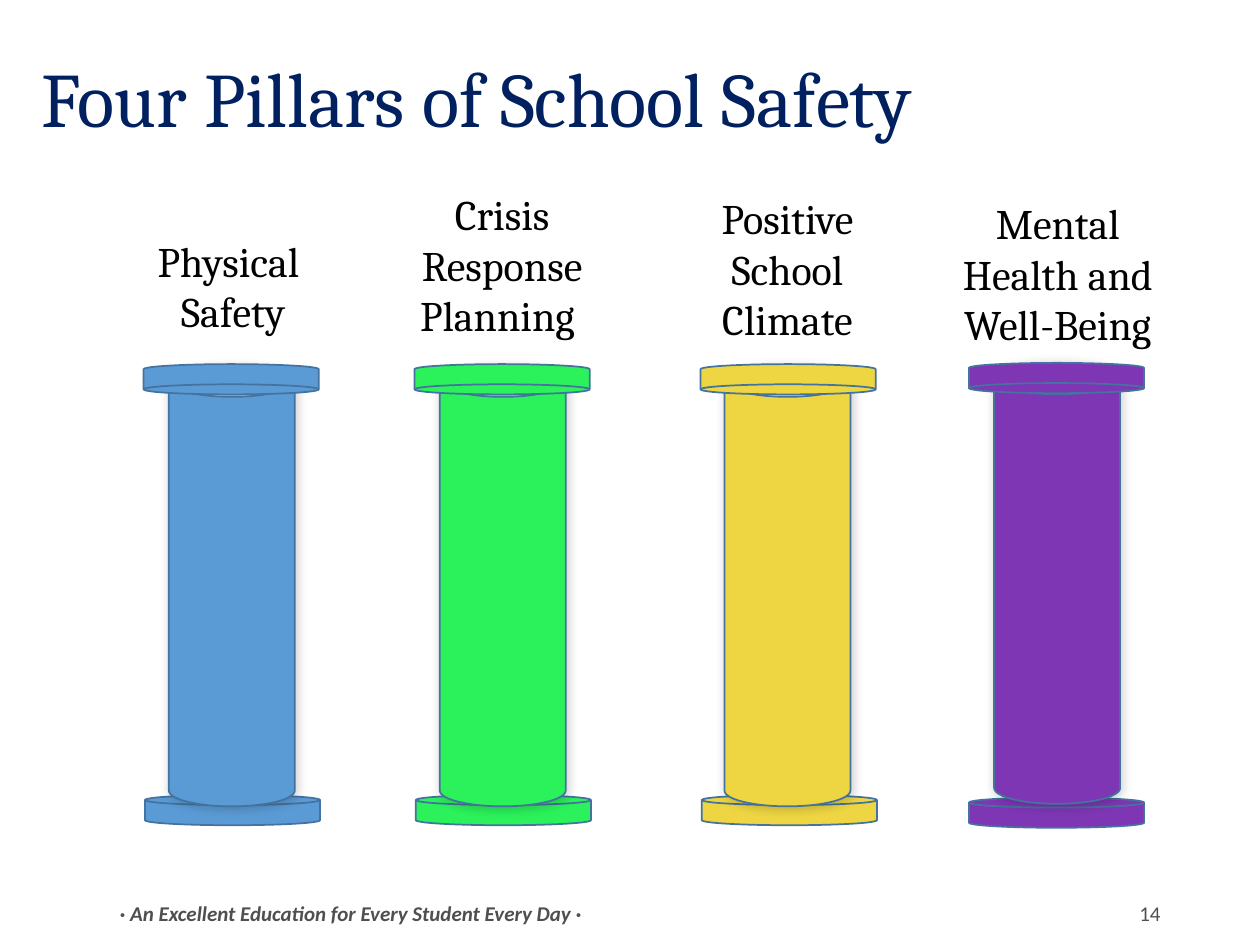
from dataclasses import dataclass

from lxml import etree
from pptx import Presentation
from pptx.dml.color import RGBColor
from pptx.enum.shapes import MSO_SHAPE
from pptx.enum.text import MSO_ANCHOR, MSO_AUTO_SIZE, PP_ALIGN
from pptx.oxml.ns import qn
from pptx.shapes.autoshape import Shape
from pptx.slide import Slide
from pptx.text.text import TextFrame
from pptx.util import Inches, Pt

CAN, DISK = MSO_SHAPE.CAN, MSO_SHAPE.FLOWCHART_MAGNETIC_DISK
LEFT, CENTER, RIGHT = PP_ALIGN.LEFT, PP_ALIGN.CENTER, PP_ALIGN.RIGHT
MIDDLE, BOTTOM, TOP = MSO_ANCHOR.MIDDLE, MSO_ANCHOR.BOTTOM, MSO_ANCHOR.TOP
FIXED, GROW = MSO_AUTO_SIZE.NONE, MSO_AUTO_SIZE.SHAPE_TO_FIT_TEXT

Box = tuple[float, float, float, float]


@dataclass(frozen=True)
class Style:
    font: str
    size: int
    color: str
    strong: bool = False


@dataclass(frozen=True)
class Theme:
    title: Style = Style("Cambria", 44, "002060")
    label: Style = Style("Cambria", 24, "000000")
    foot: Style = Style("Calibri", 12, "4F4F4F")
    motto: Style = Style("Calibri", 12, "4F4F4F", True)
    edge: str = "43739E"
    shade: str = "000000"


@dataclass(frozen=True)
class Pillar:
    lines: tuple[str, ...]
    label: Box
    color: str
    cap: tuple[float, float]
    body: tuple[float, float]
    base: tuple[float, float]


THEME = Theme()
DISK_SIZE = (1.39, 0.24)
BODY_SIZE = (1, 3.5)

PILLARS = (
    Pillar(("Physical ", "Safety"), (1.09, 1.82, 1.52, 0.91), "5B9BD5",
           (1.14, 2.89), (1.34, 2.9), (1.15, 6.31)),
    Pillar(("Crisis Response Planning ",), (3.17, 1.45, 1.63, 1.31), "2BF15A",
           (3.29, 2.89), (3.49, 2.9), (3.3, 6.31)),
    Pillar(("Positive School Climate",), (5.53, 1.48, 1.44, 1.31), "EED542",
           (5.56, 2.89), (5.75, 2.9), (5.57, 6.31)),
    Pillar(("Mental Health and Well-Being",), (7.42, 1.52, 1.95, 1.31), "7E36B4",
           (7.69, 2.88), (7.89, 2.88), (7.69, 6.33)),
)


def write(frame: TextFrame, lines: tuple[str, ...], style: Style,
          align: PP_ALIGN, anchor: MSO_ANCHOR, fit: MSO_AUTO_SIZE) -> None:
    frame.text = "\n".join(lines)
    frame.word_wrap = True
    frame.auto_size = fit
    frame.vertical_anchor = anchor
    for para in frame.paragraphs:
        para.alignment = align
        font = para.font
        font.name, font.size = style.font, Pt(style.size)
        font.bold = font.italic = style.strong
        font.color.rgb = RGBColor.from_string(style.color)


def add_text(slide: Slide, box: Box, lines: tuple[str, ...], style: Style,
             align: PP_ALIGN, anchor: MSO_ANCHOR, fit: MSO_AUTO_SIZE) -> None:
    shape = slide.shapes.add_textbox(*map(Inches, box))
    write(shape.text_frame, lines, style, align, anchor, fit)


def add_part(slide: Slide, kind: MSO_SHAPE, spot: tuple[float, float],
             size: tuple[float, float], color: str) -> Shape:
    part = slide.shapes.add_shape(kind, *map(Inches, spot + size))
    part.shadow.inherit = False
    part.fill.solid()
    part.fill.fore_color.rgb = RGBColor.from_string(color)
    part.line.color.rgb = RGBColor.from_string(THEME.edge)
    part.line.width = Pt(1)
    return part


def cast_shadow(part: Shape) -> None:
    """Add a soft 20% shadow toward the lower right."""
    effects = part.element.spPr.find(qn("a:effectLst"))
    outer = etree.SubElement(effects, qn("a:outerShdw"), blurRad=str(Pt(6)),
                             dist=str(Pt(1)), dir=str(45 * 60000), rotWithShape="0")
    color = etree.SubElement(outer, qn("a:srgbClr"), val=THEME.shade)
    etree.SubElement(color, qn("a:alpha"), val="20000")


def add_pillar(slide: Slide, pillar: Pillar) -> None:
    add_part(slide, DISK, pillar.base, DISK_SIZE, pillar.color)
    cast_shadow(add_part(slide, CAN, pillar.body, BODY_SIZE, pillar.color))
    add_part(slide, DISK, pillar.cap, DISK_SIZE, pillar.color).rotation = 180
    add_text(slide, pillar.label, pillar.lines, THEME.label, CENTER, TOP, GROW)


def add_title(slide: Slide, text: str) -> None:
    title = slide.shapes.title
    title.left, title.top = Inches(0.23), Inches(0.18)
    title.width, title.height = Inches(8.12), Inches(1.27)
    write(title.text_frame, (text,), THEME.title, LEFT, MIDDLE, FIXED)
    title.text_frame.paragraphs[0].line_spacing = 0.9


def main() -> None:
    deck = Presentation()
    deck.slide_width, deck.slide_height = Inches(10), Inches(7.5)
    slide = deck.slides.add_slide(deck.slide_layouts[5])
    add_title(slide, "Four Pillars of School Safety")
    add_text(slide, (7.06, 7, 2.25, 0.4), ("14",), THEME.foot, RIGHT, BOTTOM, FIXED)
    add_text(slide, (0.82, 7, 3.93, 0.4),
             ("· An Excellent Education for Every Student Every Day ·",),
             THEME.motto, CENTER, BOTTOM, FIXED)
    for pillar in PILLARS:
        add_pillar(slide, pillar)
    deck.save("out.pptx")


if __name__ == "__main__":
    main()
